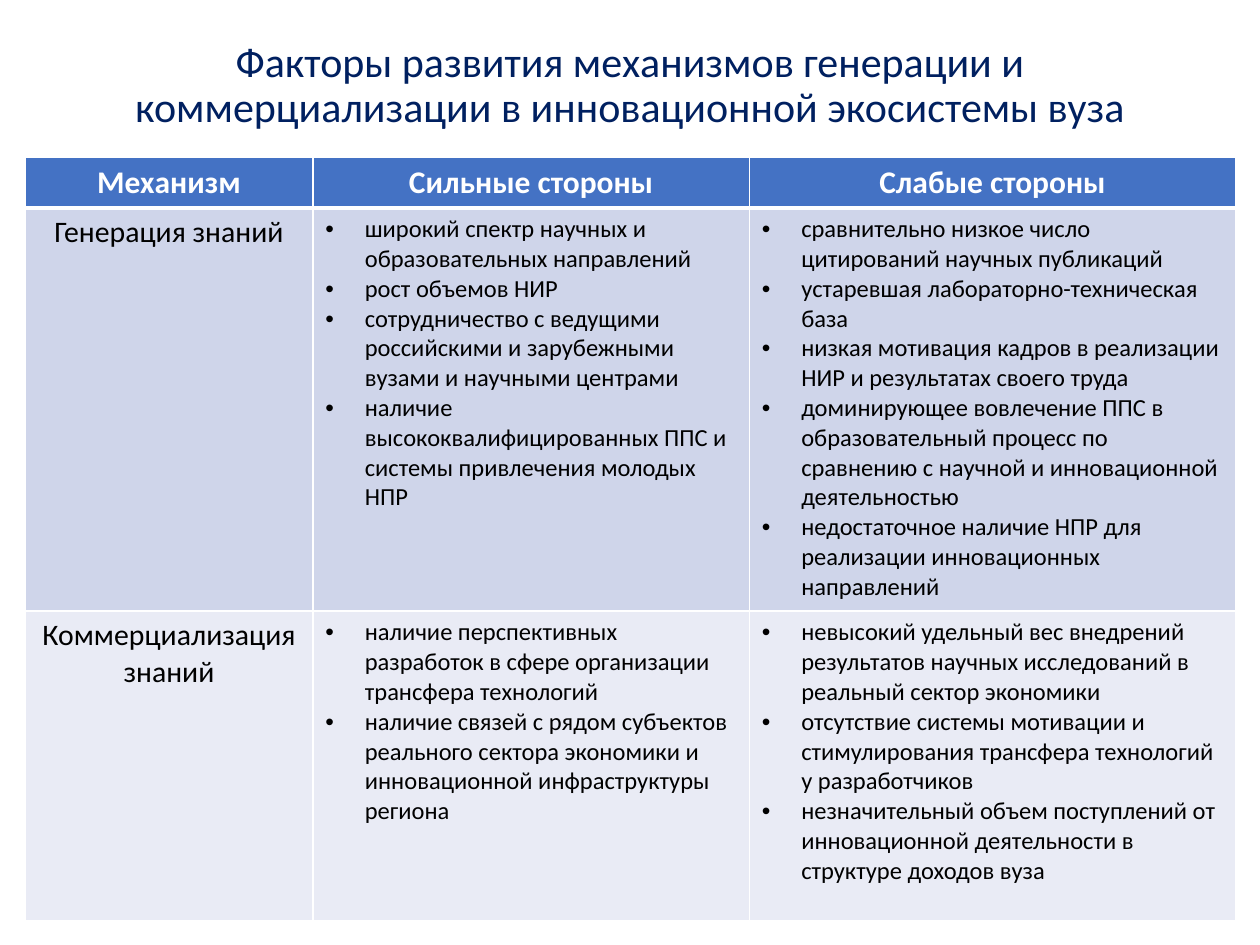
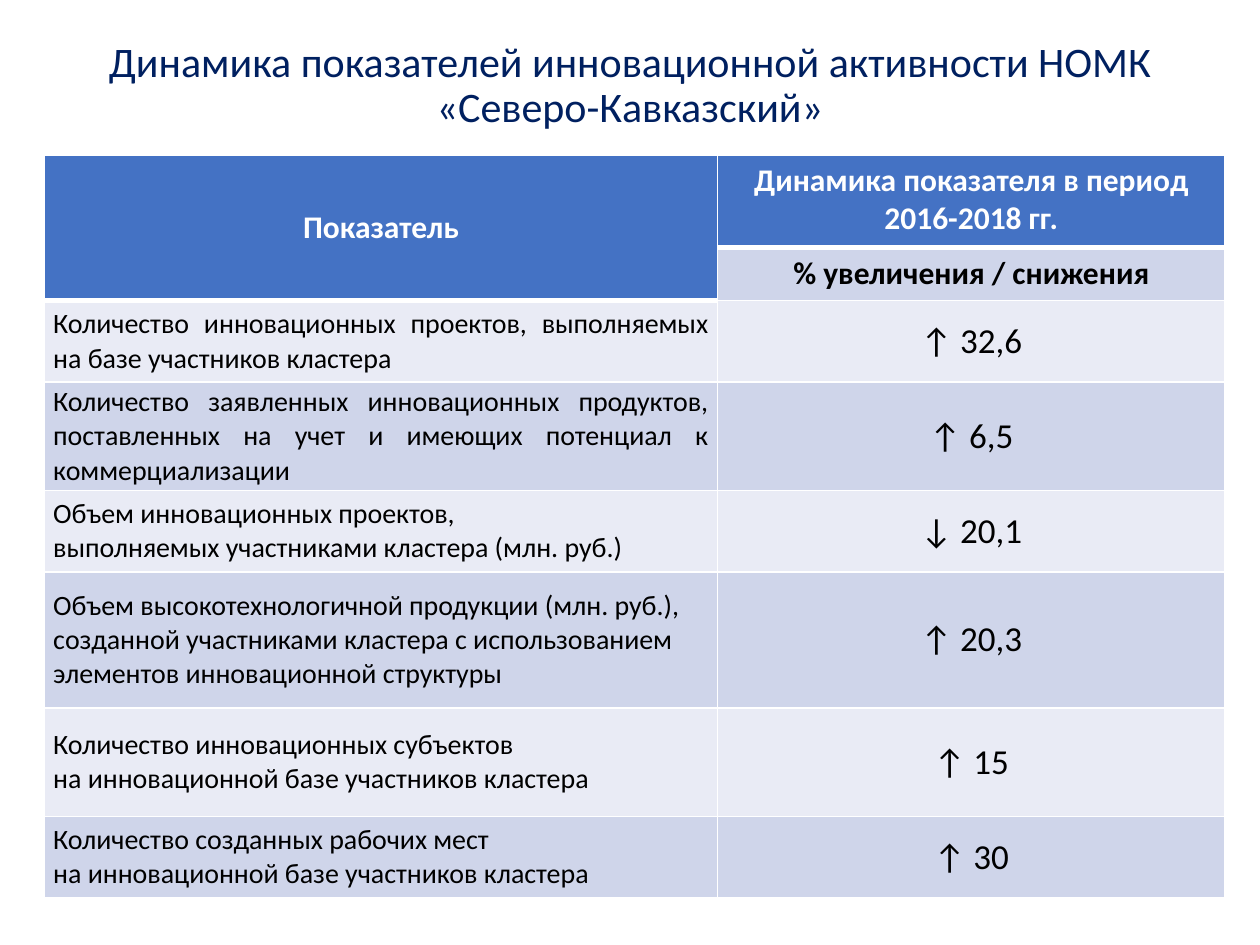
from pptx import Presentation
from pptx.dml.color import RGBColor
from pptx.enum.text import MSO_ANCHOR, PP_ALIGN
from pptx.oxml.ns import qn
from pptx.util import Pt
from lxml.etree import SubElement

NAVY = RGBColor(0x00, 0x20, 0x60)
WHITE = RGBColor(0xFF, 0xFF, 0xFF)
BLACK = RGBColor(0x00, 0x00, 0x00)
BLUE = RGBColor(0x44, 0x72, 0xC4)
BAND_DARK = RGBColor(0xCF, 0xD5, 0xEA)
BAND_LIGHT = RGBColor(0xE9, 0xEB, 0xF5)

FONT = "Calibri"
HEADER = {"size": Pt(18), "bold": True}
MECHANISM = {"size": Pt(17), "bold": False}
FACTOR = {"size": Pt(14), "bold": False}
INDICATOR = {"size": Pt(16), "bold": False}
CHANGE = {"size": Pt(20), "bold": False}
MIDDLE = {"vertical_anchor": MSO_ANCHOR.MIDDLE}
COMPACT = {**MIDDLE, "margin_left": Pt(5.04), "margin_right": Pt(5.04),
           "margin_top": 0, "margin_bottom": 0}

FACTOR_HEADERS = ["Механизм", "Сильные стороны", "Слабые стороны"]
FACTORS = [
    ("Генерация знаний",
     ["широкий спектр научных и образовательных направлений",
      "рост объемов НИР",
      "сотрудничество с ведущими российскими и зарубежными вузами и научными центрами",
      "наличие высококвалифицированных ППС и системы привлечения молодых НПР"],
     ["сравнительно низкое число цитирований научных публикаций",
      "устаревшая лабораторно-техническая база",
      "низкая мотивация кадров в реализации НИР и результатах своего труда",
      "доминирующее вовлечение ППС в образовательный процесс по сравнению "
      "с научной и инновационной деятельностью",
      "недостаточное наличие НПР для реализации инновационных направлений"]),
    ("Коммерциализация знаний",
     ["наличие перспективных разработок в сфере организации трансфера технологий",
      "наличие связей с рядом субъектов реального сектора экономики "
      "и инновационной инфраструктуры региона"],
     ["невысокий удельный вес внедрений результатов научных исследований "
      "в реальный сектор экономики",
      "отсутствие системы мотивации и стимулирования трансфера технологий у разработчиков",
      "незначительный объем поступлений от инновационной деятельности "
      "в структуре доходов вуза"]),
]

CLUSTER_BASE = "на инновационной базе участников кластера"
INDICATORS = [
    (["Количество инновационных проектов, выполняемых на базе участников кластера"],
     "↑ 32,6", PP_ALIGN.JUSTIFY),
    (["Количество заявленных инновационных продуктов, поставленных на учет "
      "и имеющих потенциал к коммерциализации"], "↑ 6,5", PP_ALIGN.JUSTIFY),
    (["Объем инновационных проектов,",
      "выполняемых участниками кластера (млн. руб.)"], "↓ 20,1", PP_ALIGN.JUSTIFY),
    (["Объем высокотехнологичной продукции (млн. руб.), созданной участниками кластера "
      "с использованием элементов инновационной структуры"], "↑ 20,3", PP_ALIGN.LEFT),
    (["Количество инновационных субъектов", CLUSTER_BASE], "↑ 15", PP_ALIGN.JUSTIFY),
    (["Количество созданных рабочих мест", CLUSTER_BASE], "↑ 30", PP_ALIGN.JUSTIFY),
]


def set_all(target, formats):
    for name, value in formats.items():
        setattr(target, name, value)


class SlideBuilder:
    def __init__(self, deck):
        self.deck = deck
        self.page = None

    def start_page(self, title):
        self.page = self.deck.slides.add_slide(self.deck.slide_layouts[6])
        box = self.page.shapes.add_textbox(Pt(36.7), Pt(20.9), Pt(646.6), Pt(56.9))
        set_all(box.text_frame, {"word_wrap": True, **MIDDLE})
        self.fill_text(box.text_frame, [title], {"size": Pt(24)}, NAVY, PP_ALIGN.CENTER)
        box.text_frame.paragraphs[0].line_spacing = 0.9

    def fill_text(self, frame, lines, font, color, align, bullets=False):
        for index, line in enumerate(lines):
            para = frame.add_paragraph() if index else frame.paragraphs[0]
            para.alignment = align
            span = para.add_run()
            span.text = line
            set_all(span.font, {"name": FONT, **font})
            span.font.color.rgb = color
            if bullets:
                self.bullet(para)

    def bullet(self, para):
        properties = para._p.get_or_add_pPr()
        properties.set("marL", str(Pt(22.5)))
        properties.set("indent", str(-Pt(22.5)))
        SubElement(properties, qn("a:buFont"), typeface="Arial")
        SubElement(properties, qn("a:buChar"), char="•")

    def table(self, left, top, widths, heights):
        frame = self.page.shapes.add_table(
            len(heights), len(widths), Pt(left), Pt(top), Pt(sum(widths)), Pt(sum(heights)))
        table = frame.table
        for column, width in zip(table.columns, widths):
            column.width = Pt(width)
        for index, (row, height) in enumerate(zip(table.rows, heights)):
            row.height = Pt(height)
            fill = BLUE if index == 0 else BAND_DARK if index % 2 else BAND_LIGHT
            for cell in row.cells:
                self.borders(cell, index == 0)
                cell.fill.solid()
                cell.fill.fore_color.rgb = fill
        return table

    def borders(self, cell, is_header):
        widths = {"lnL": 1, "lnR": 1, "lnT": 1, "lnB": 3 if is_header else 1}
        if not is_header:
            del widths["lnT"]
        for side, width in widths.items():
            line = SubElement(cell._tc.get_or_add_tcPr(), qn(f"a:{side}"), w=str(Pt(width)))
            solid = SubElement(line, qn("a:solidFill"))
            SubElement(solid, qn("a:srgbClr"), val=str(WHITE))

    def cell(self, cell, lines, font, color=BLACK, align=PP_ALIGN.CENTER,
             layout=None, bullets=False):
        set_all(cell, layout or {})
        self.fill_text(cell.text_frame, lines, font, color, align, bullets)


def build_factors(builder):
    builder.start_page("Факторы развития механизмов генерации и коммерциализации "
                       "в инновационной экосистемы вуза")
    table = builder.table(14.4, 90, [164.4, 249.4, 278], [28.2, 230.4, 177.1])
    for column, header in enumerate(FACTOR_HEADERS):
        builder.cell(table.cell(0, column), [header], HEADER, WHITE)
    for row, (mechanism, *sides) in enumerate(FACTORS, 1):
        builder.cell(table.cell(row, 0), [mechanism], MECHANISM)
        for column, factors in enumerate(sides, 1):
            builder.cell(table.cell(row, column), factors, FACTOR,
                         align=PP_ALIGN.LEFT, bullets=True)


def build_indicators(builder):
    builder.start_page("Динамика показателей инновационной активности НОМК "
                       "«Северо-Кавказский»")
    table = builder.table(25.4, 88.6, [384.7, 290],
                          [53, 30.2, 46.6, 61.9, 46.6, 77.8, 61.9, 46.6])
    table.cell(0, 0).merge(table.cell(1, 0))
    builder.cell(table.cell(0, 0), ["Показатель"], HEADER, WHITE, layout=MIDDLE)
    builder.cell(table.cell(0, 1), ["Динамика показателя в период 2016-2018 гг."], HEADER, WHITE)
    builder.cell(table.cell(1, 1), ["% увеличения / снижения"], HEADER)
    for row, (lines, change, align) in enumerate(INDICATORS, 2):
        builder.cell(table.cell(row, 0), lines, INDICATOR, align=align, layout=COMPACT)
        builder.cell(table.cell(row, 1), [change], CHANGE, layout=COMPACT)


def main():
    deck = Presentation()
    set_all(deck, {"slide_width": Pt(720), "slide_height": Pt(540)})
    builder = SlideBuilder(deck)
    build_factors(builder)
    build_indicators(builder)
    deck.save("out.pptx")


if __name__ == "__main__":
    main()
